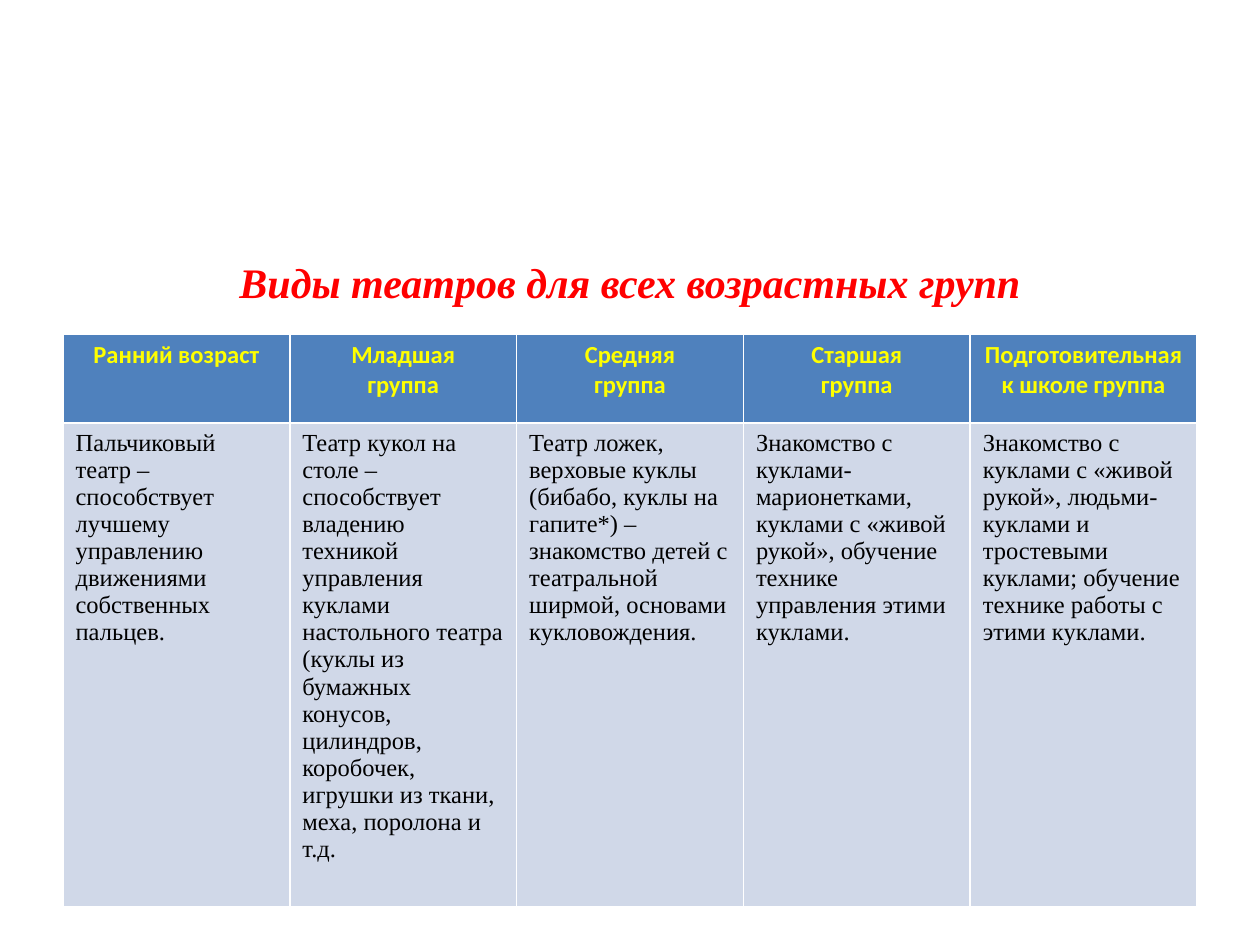
"""Build a slide with a table of puppet theatre kinds by age group."""
from pptx import Presentation
from pptx.dml.color import RGBColor
from pptx.enum.text import MSO_ANCHOR, PP_ALIGN
from pptx.util import Cm, Pt

HUES = {"title": "FF0000", "head": "FFFF00", "text": "000000",
        "blue": "4F81BD", "pale": "D0D8E8"}
SERIF = "Times New Roman"
COLS = [
    (["Ранний возраст"],
     "Пальчиковый театр – способствует лучшему управлению движениями "
     "собственных пальцев."),
    (["Младшая", "группа"],
     "Театр кукол на столе – способствует владению техникой управления "
     "куклами настольного театра (куклы из бумажных конусов, цилиндров, "
     "коробочек, игрушки из ткани, меха, поролона и т.д."),
    (["Средняя", "группа"],
     "Театр ложек, верховые куклы (бибабо, куклы на гапите*) – знакомство "
     "детей с театральной ширмой, основами кукловождения."),
    (["Старшая", "группа"],
     "Знакомство с куклами-марионетками, куклами с «живой рукой», обучение "
     "технике управления этими куклами."),
    (["Подготовительная к школе группа"],
     "Знакомство с куклами с «живой рукой», людьми-куклами и тростевыми "
     "куклами; обучение технике работы с этими куклами."),
]


def write(frame, lines, font, size, hue, bold, align):
    for i, line in enumerate(lines):
        para = frame.add_paragraph() if i else frame.paragraphs[0]
        para.alignment = align
        run = para.add_run()
        run.text = line
        run.font.name = font
        run.font.size = Pt(size)
        run.font.bold = bold
        run.font.color.rgb = RGBColor.from_string(HUES[hue])
    return run


def paint(cell, hue):
    cell.fill.solid()
    cell.fill.fore_color.rgb = RGBColor.from_string(HUES[hue])


deck = Presentation()
deck.slide_width, deck.slide_height = Cm(25.4), Cm(19.05)
slide = deck.slides.add_slide(deck.slide_layouts[6])

title = slide.shapes.add_textbox(Cm(1.27), Cm(4.93), Cm(22.86), Cm(3.2)).text_frame
title.word_wrap = True
title.vertical_anchor = MSO_ANCHOR.TOP
title.margin_top = Cm(0.24)
run = write(title, ["Виды театров для всех возрастных групп"],
            SERIF, 24, "title", True, PP_ALIGN.CENTER)
run.font.italic = True

grid = slide.shapes.add_table(2, len(COLS), Cm(1.27), Cm(6.73),
                              Cm(22.86), Cm(11)).table
grid.horz_banding = False
grid.rows[0].height, grid.rows[1].height = Cm(1.8), Cm(9.2)

for i, (head, body) in enumerate(COLS):
    grid.columns[i].width = Cm(22.86 / len(COLS))
    top, low = grid.cell(0, i), grid.cell(1, i)
    paint(top, "blue")
    paint(low, "pale")
    write(top.text_frame, head, "Calibri", 14, "head", True, PP_ALIGN.CENTER)
    write(low.text_frame, [body], SERIF, 14, "text", False, PP_ALIGN.LEFT)

deck.save("out.pptx")
